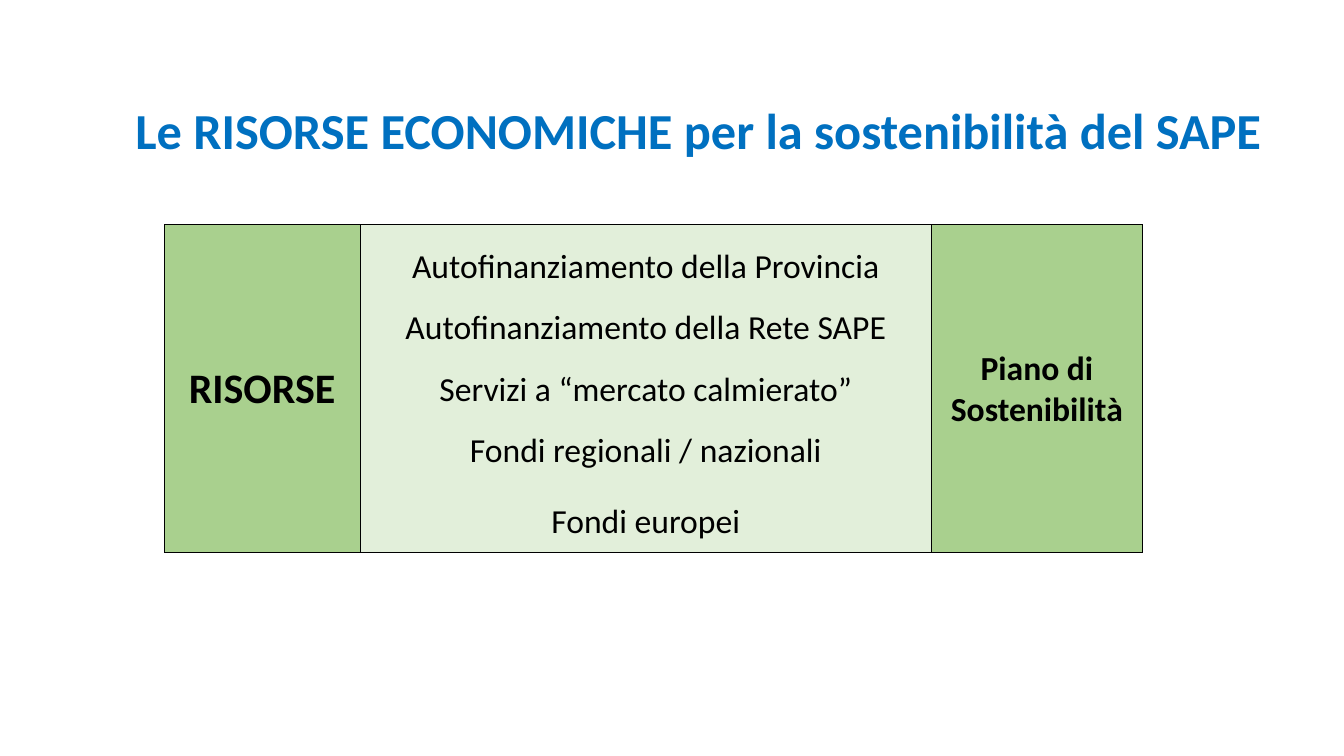
from lxml.etree import SubElement
from pptx import Presentation
from pptx.dml.color import RGBColor
from pptx.enum.text import MSO_ANCHOR, MSO_AUTO_SIZE, PP_ALIGN
from pptx.oxml.ns import qn
from pptx.util import Inches, Pt

FONT = "Calibri"
BLUE = RGBColor(0x00, 0x70, 0xC0)
BLACK = RGBColor(0x00, 0x00, 0x00)
GREEN = RGBColor(0xA9, 0xD0, 0x8E)
PALE_GREEN = RGBColor(0xE2, 0xEF, 0xDA)

RESOURCES = [
    "Autofinanziamento della Provincia",
    "Autofinanziamento della Rete SAPE",
    "Servizi a “mercato calmierato”",
    "Fondi regionali / nazionali",
    "Fondi europei",
]
COLUMN_WIDTHS = [1.94, 5.67, 2.09]
ROW_HEIGHTS = [0.61, 0.61, 0.61, 0.61, 0.8]


def write_text(text_frame, text, size, color, bold, line_spacing):
    paragraph = text_frame.paragraphs[0]
    paragraph.alignment = PP_ALIGN.CENTER
    paragraph.line_spacing = line_spacing
    run = paragraph.add_run()
    run.text = text
    run.font.name = FONT
    run.font.size = Pt(size)
    run.font.bold = bold
    run.font.color.rgb = color


def set_borders(cell, visible_sides):
    """Draw thin black lines on the visible sides and none on the others."""
    properties = cell._tc.get_or_add_tcPr()
    for index, side in enumerate("LRTB"):
        line = SubElement(properties, qn(f"a:ln{side}"), w=str(Pt(0.5)))
        if side in visible_sides:
            fill = SubElement(line, qn("a:solidFill"))
            SubElement(fill, qn("a:srgbClr"), val=str(BLACK))
        else:
            SubElement(line, qn("a:noFill"))
        properties.insert(index, line)


def format_cell(cell, color, visible_sides):
    cell.fill.solid()
    cell.fill.fore_color.rgb = color
    cell.vertical_anchor = MSO_ANCHOR.MIDDLE
    cell.margin_left = cell.margin_right = cell.margin_top = Inches(0.01)
    cell.margin_bottom = 0
    set_borders(cell, visible_sides)


def add_title(slide, left, top, width, height):
    title = slide.shapes.title
    title.left, title.top = Inches(left), Inches(top)
    title.width, title.height = Inches(width), Inches(height)
    text_frame = title.text_frame
    text_frame.word_wrap = True
    text_frame.auto_size = MSO_AUTO_SIZE.SHAPE_TO_FIT_TEXT
    text_frame.vertical_anchor = MSO_ANCHOR.MIDDLE
    write_text(text_frame, "Le RISORSE ECONOMICHE per la sostenibilità del SAPE",
               36, BLUE, True, 0.9)


def add_resources_table(slide, left, top):
    last = len(RESOURCES) - 1
    table = slide.shapes.add_table(
        len(RESOURCES), len(COLUMN_WIDTHS), Inches(left), Inches(top),
        Inches(sum(COLUMN_WIDTHS)), Inches(sum(ROW_HEIGHTS))).table
    table.first_row = table.horz_banding = False
    for column, width in zip(table.columns, COLUMN_WIDTHS):
        column.width = Inches(width)
    for row, height in zip(table.rows, ROW_HEIGHTS):
        row.height = Inches(height)

    # Outer columns: one merged cell each
    for column, text, size in [(0, "RISORSE", 30), (2, "Piano di Sostenibilità", 24)]:
        for row in range(last + 1):
            format_cell(table.cell(row, column), GREEN, "LRTB")
        merged = table.cell(0, column)
        merged.merge(table.cell(last, column))
        write_text(merged.text_frame, text, size, BLACK, True, 1.0)

    # Middle column: one resource per row, framed as a whole
    for row, resource in enumerate(RESOURCES):
        cell = table.cell(row, 1)
        sides = "LR" + ("T" if row == 0 else "") + ("B" if row == last else "")
        format_cell(cell, PALE_GREEN, sides)
        write_text(cell.text_frame, resource, 24, BLACK, False, 1.5)


def main():
    presentation = Presentation()
    presentation.slide_width = Inches(13.33)
    presentation.slide_height = Inches(7.5)
    slide = presentation.slides.add_slide(presentation.slide_layouts[5])
    add_title(slide, 1.18, 1, 11.5, 0.65)
    add_resources_table(slide, 1.63, 2.23)
    presentation.save("out.pptx")


if __name__ == "__main__":
    main()
